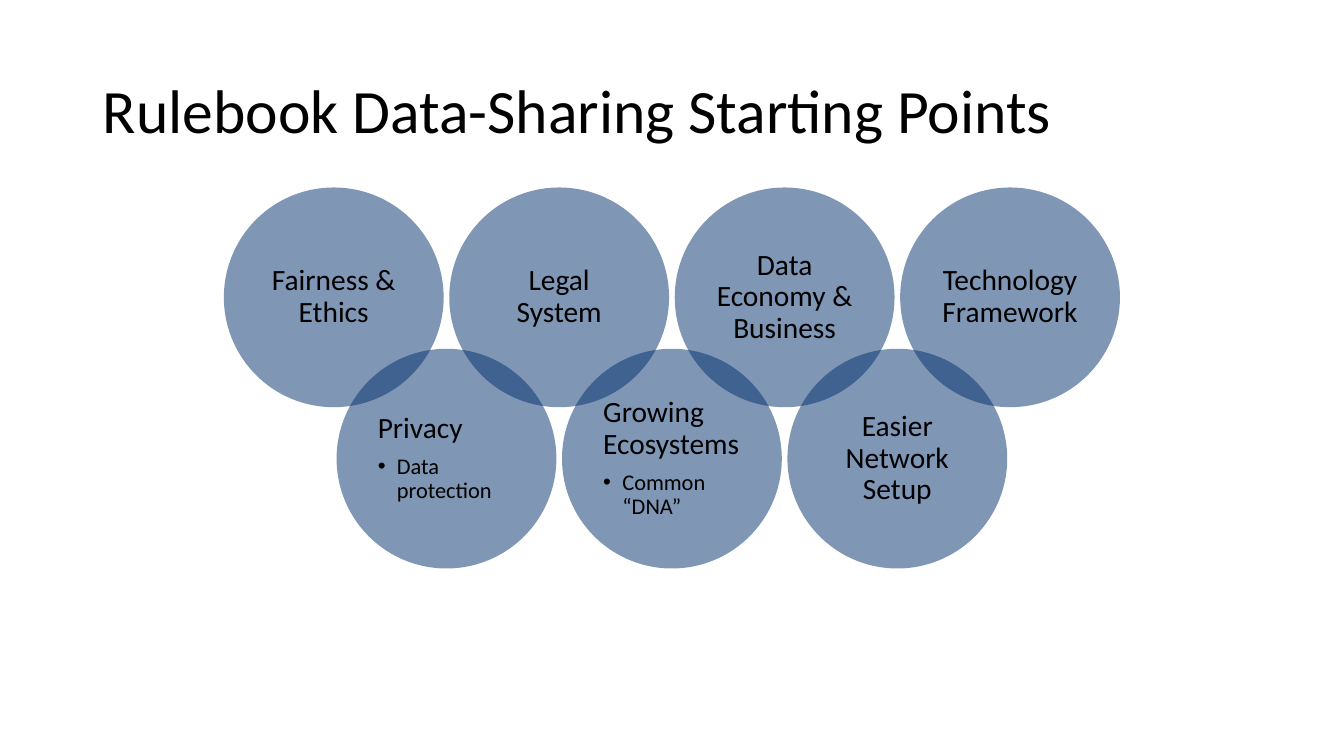
from lxml import etree
from pptx import Presentation
from pptx import util as u
from pptx.dml.color import RGBColor
from pptx.enum import shapes, text
from pptx.oxml.ns import qn


def paint(color_format, hex_string):
    color_format.rgb = RGBColor.from_string(hex_string)


def style(para, size, align, space_after=0):
    para.alignment = align
    para.line_spacing = 0.9
    para.space_after = u.Pt(space_after)
    para.font.size = u.Pt(size)
    para.font.name = "Calibri"
    paint(para.font.color, "000000")


deck = Presentation()
deck.slide_width, deck.slide_height = u.Inches(13.33), u.Inches(7.5)
page = deck.slides.add_slide(deck.slide_layouts[5])

# Title
title = page.shapes.title
title.left, title.top = u.Inches(0.92), u.Inches(0.4)
title.width, title.height = u.Inches(11.5), u.Inches(1.45)
title.text_frame.text = "Rulebook Data-Sharing Starting Points"
title.text_frame.vertical_anchor = text.MSO_ANCHOR.MIDDLE
title.text_frame.auto_size = text.MSO_AUTO_SIZE.NONE
style(title.text_frame.paragraphs[0], 44, text.PP_ALIGN.LEFT)

# Interlocking circles, alternating between the upper and lower row
starting_points = [
    ("Fairness & Ethics", None),
    ("Privacy", "Data protection"),
    ("Legal System", None),
    ("Growing Ecosystems", "Common “DNA”"),
    ("Data Economy & Business", None),
    ("Easier Network Setup", None),
    ("Technology Framework", None),
]
LEFT, TOP = 2.22, 1.86
DIAMETER = 2.18
STEP, DROP = 1.118, 1.6

for column, (heading, detail) in enumerate(starting_points):
    circle = page.shapes.add_shape(
        shapes.MSO_SHAPE.OVAL,
        u.Inches(LEFT + column * STEP), u.Inches(TOP + column % 2 * DROP),
        u.Inches(DIAMETER), u.Inches(DIAMETER))
    circle.shadow.inherit = False
    circle.line.fill.background()
    circle.fill.solid()
    paint(circle.fill.fore_color, "002F6C")
    fill_color = circle.fill._xPr.find(qn("a:solidFill"))[0]
    etree.SubElement(fill_color, qn("a:alpha"), val="50000")

    frame = circle.text_frame
    frame.word_wrap = True
    frame.vertical_anchor = text.MSO_ANCHOR.MIDDLE
    frame.margin_left = frame.margin_right = u.Inches(0.09)
    frame.margin_top = frame.margin_bottom = u.Inches(0.09)
    frame.text = heading
    align = text.PP_ALIGN.LEFT if detail else text.PP_ALIGN.CENTER
    style(frame.paragraphs[0], 21, align, 7.35)

    # Bulleted detail below the heading
    if detail:
        para = frame.add_paragraph()
        para.text = detail
        para.level = 1
        style(para, 16, align, 2.4)
        properties = para._p.get_or_add_pPr()
        properties.set("marL", str(u.Inches(0.19)))
        properties.set("indent", str(-u.Inches(0.19)))
        etree.SubElement(properties, qn("a:buFont"), typeface="Arial")
        etree.SubElement(properties, qn("a:buChar"), char="•")
        # Default run properties come last in the paragraph properties
        properties.append(properties.find(qn("a:defRPr")))

deck.save("out.pptx")
